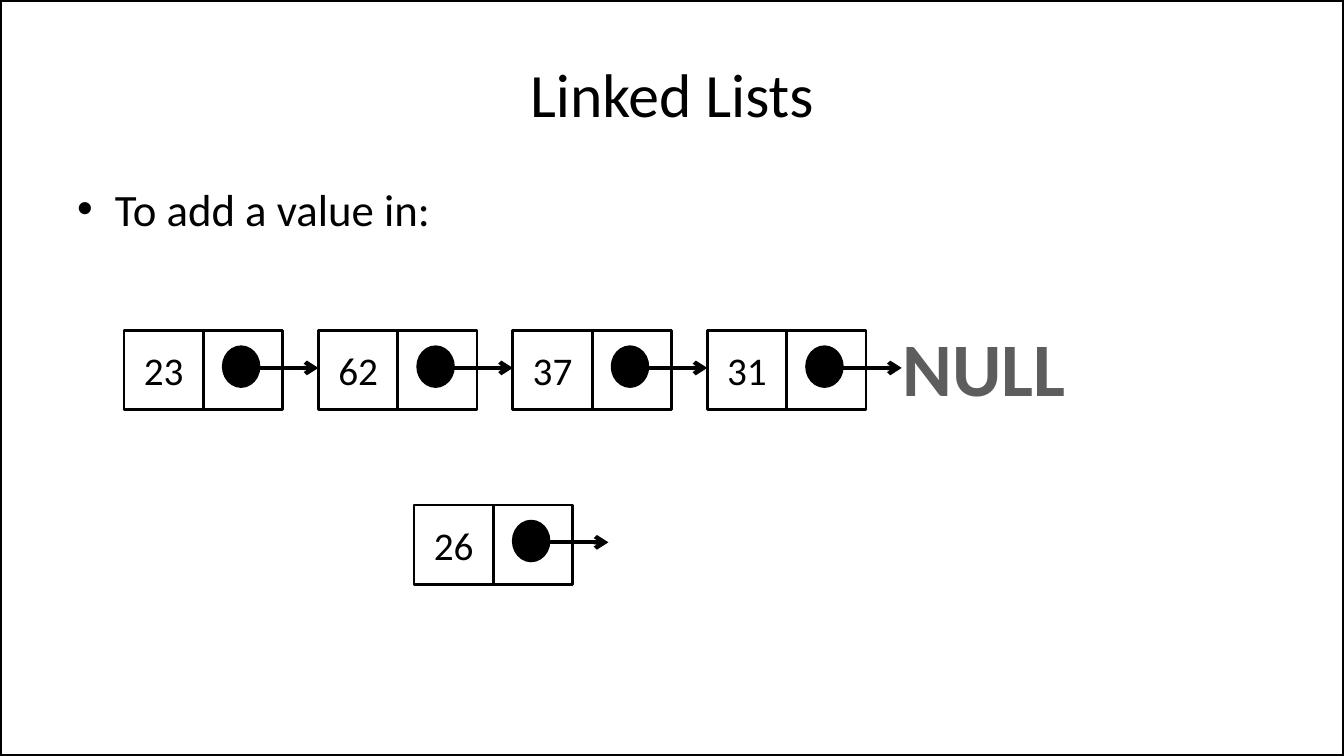
from lxml.etree import SubElement
from pptx import Presentation
from pptx.dml.color import RGBColor
from pptx.enum.shapes import MSO_CONNECTOR, MSO_SHAPE
from pptx.enum.text import MSO_ANCHOR as ANCHOR, PP_ALIGN as ALIGN
from pptx.oxml.ns import qn
from pptx.util import Inches, Pt

COLORS = {"ink": "000000", "null": "5D5D5D", "paper": "FFFFFF"}
FONT = "Calibri"
UNIT = 0.1  # inches per grid column and row
COLS, ROWS = 133.33, 75
CELL = 7.87
NODE_PITCH = 19.29


def grid(*cells):
    return [Inches(c * UNIT) for c in cells]


def rgb(name):
    return RGBColor.from_string(COLORS[name])


def write(sp, text, size=28, color="ink", bold=False, align=ALIGN.CENTER,
          anchor=ANCHOR.MIDDLE, wrap=True):
    tf = sp.text_frame
    tf.word_wrap = wrap
    tf.vertical_anchor = anchor
    p = tf.paragraphs[0]
    p.alignment = align
    r = p.add_run()
    r.text = text
    r.font.name = FONT
    r.font.size = Pt(size)
    r.font.bold = bold
    r.font.color.rgb = rgb(color)
    return p


class ListSlide:
    """Draws on one slide; all lengths are grid columns and rows."""

    def __init__(self, prs):
        self.slide = prs.slides.add_slide(prs.slide_layouts[5])
        self.shapes = self.slide.shapes
        fill = self.slide.background.fill
        fill.solid()
        fill.fore_color.rgb = rgb("paper")

    def title(self, text, x, y, w, h):
        sp = self.shapes.title
        sp.left, sp.top, sp.width, sp.height = grid(x, y, w, h)
        write(sp, text, size=44)

    def shape(self, kind, x, y, w, h, fill=None, weight=2):
        sp = self.shapes.add_shape(kind, *grid(x, y, w, h))
        sp.shadow.inherit = False
        if fill:
            sp.fill.solid()
            sp.fill.fore_color.rgb = rgb(fill)
        else:
            sp.fill.background()
        sp.line.color.rgb = rgb("ink")
        sp.line.width = Pt(weight)
        return sp

    def text(self, text, x, y, w, h, **style):
        return write(self.shapes.add_textbox(*grid(x, y, w, h)), text, **style)

    def bullet(self, text, x, y, w, h, size=32):
        p = self.text(text, x, y, w, h, size=size, align=ALIGN.LEFT, anchor=ANCHOR.TOP)
        p.space_before = Pt(size * 0.2)
        pPr = p._p.get_or_add_pPr()
        indent = Inches(0.375)
        pPr.set("marL", str(indent))
        pPr.set("indent", str(-indent))
        SubElement(pPr, qn("a:buFont"), typeface="Arial")
        SubElement(pPr, qn("a:buChar"), char="•")

    def arrow(self, x1, x2, y):
        ln = self.shapes.add_connector(MSO_CONNECTOR.STRAIGHT, *grid(x1, y, x2, y))
        ln.line.color.rgb = rgb("ink")
        ln.line.width = Pt(3)
        SubElement(ln.line._get_or_add_ln(), qn("a:tailEnd"), type="arrow")
        SubElement(ln._element.spPr, qn("a:effectLst"))

    def node(self, value, x, y):
        """A value cell, then a pointer cell whose dot sends out an arrow."""
        write(self.shape(MSO_SHAPE.RECTANGLE, x, y, CELL, CELL), value)
        self.shape(MSO_SHAPE.OVAL, x + 9.85, y + 1.6, 3.54, 3.94, fill="ink")
        self.arrow(x + 13.39, x + NODE_PITCH, y + 3.7)
        self.shape(MSO_SHAPE.RECTANGLE, x + CELL, y, CELL, CELL)


def main():
    prs = Presentation()
    prs.slide_width, prs.slide_height = grid(COLS, ROWS)

    s = ListSlide(prs)
    s.shape(MSO_SHAPE.RECTANGLE, 0, 0, COLS, ROWS, weight=3)
    s.title("Linked Lists", 6.67, 3, 120, 12.5)
    s.bullet("To add a value in:", 6.67, 17.5, 120, 49.5)
    for i, value in enumerate(["23", "62", "37", "31"]):
        s.node(value, 12.3 + i * NODE_PITCH, 32.8)
    s.text("NULL", 88.4, 31.3, 18.4, 10.1, size=54, color="null", bold=True,
           anchor=ANCHOR.TOP, wrap=False)
    s.node("26", 41.07, 50.1)

    prs.save("out.pptx")


if __name__ == "__main__":
    main()
